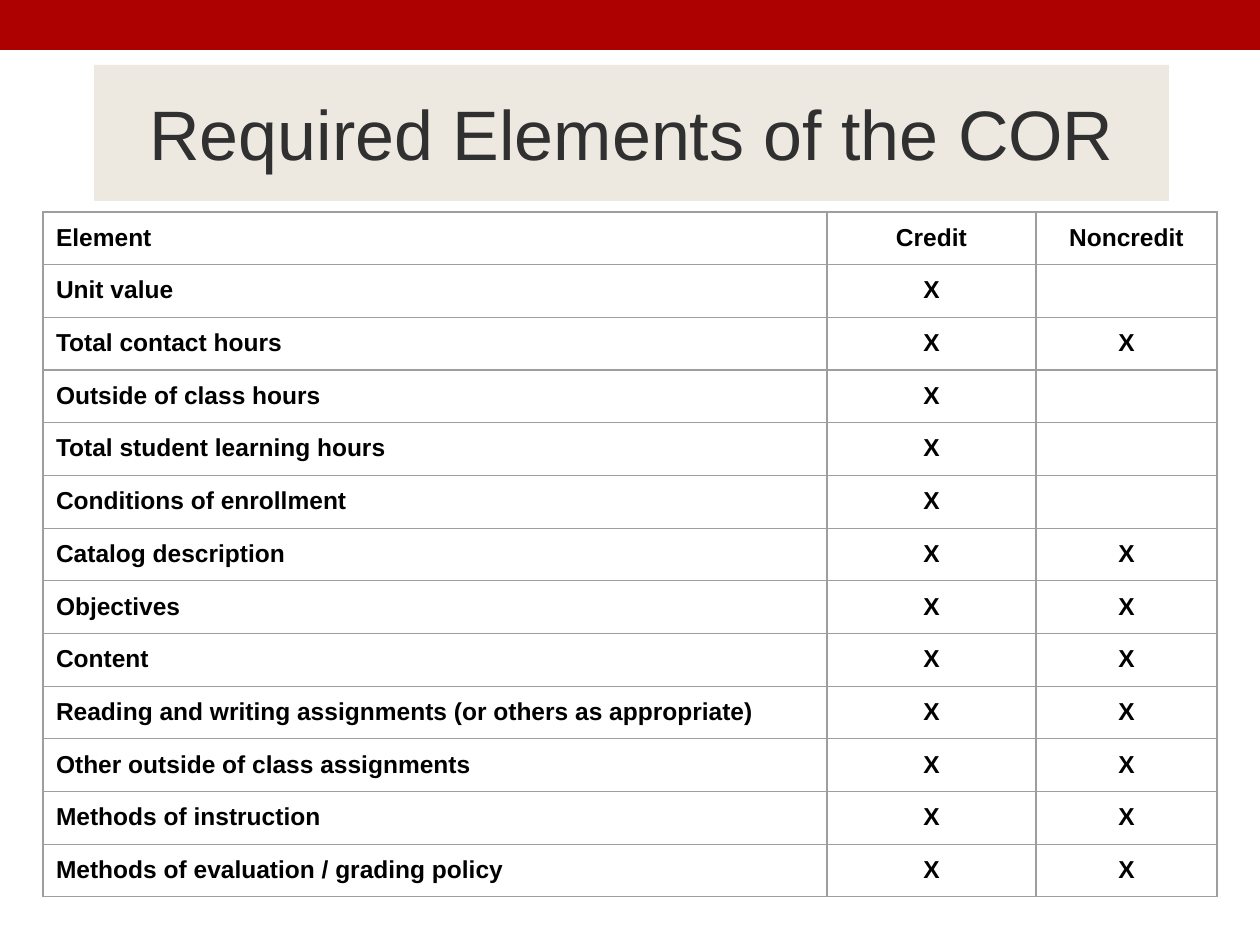
from lxml.etree import SubElement
from pptx import Presentation
from pptx.dml.color import RGBColor
from pptx.enum.shapes import MSO_SHAPE
from pptx.enum.text import MSO_ANCHOR, PP_ALIGN
from pptx.oxml.ns import qn
from pptx.util import Pt

TITLE = "Required Elements of the COR"
ROWS = [
    ("Element", "Credit", "Noncredit"),
    ("Unit value", "X", ""),
    ("Total contact hours", "X", "X"),
    ("Outside of class hours", "X", ""),
    ("Total student learning hours", "X", ""),
    ("Conditions of enrollment", "X", ""),
    ("Catalog description", "X", "X"),
    ("Objectives", "X", "X"),
    ("Content", "X", "X"),
    ("Reading and writing assignments (or others as appropriate)", "X", "X"),
    ("Other outside of class assignments", "X", "X"),
    ("Methods of instruction", "X", "X"),
    ("Methods of evaluation / grading policy", "X", "X"),
]
COLS = (784, 209, 181)
HIGH = 685
SIZE = 14
HUES = {"bar": "AD0101", "panel": "EDE9E1", "title": "303030",
        "text": "000000", "line": "9E9E9E"}


def px(n):
    return round(n * 914400 / 126)


def hue(name):
    return RGBColor.from_string(HUES[name])


def style(para, size, name, align, bold):
    para.alignment = align
    font = para.font
    font.name, font.size, font.bold = "Arial", Pt(size), bold
    font.color.rgb = hue(name)


def paint(shape, name):
    shape.fill.solid()
    shape.fill.fore_color.rgb = hue(name)


def edge(cell):
    props = cell._tc.get_or_add_tcPr()
    for tag in ("a:lnL", "a:lnR", "a:lnT", "a:lnB"):
        line = SubElement(props, qn(tag), w=str(Pt(0.75)))
        fill = SubElement(line, qn("a:solidFill"))
        SubElement(fill, qn("a:srgbClr"), val=HUES["line"])


def add_title(slide):
    title = slide.shapes.title
    title.left, title.top = px(94), px(65)
    title.width, title.height = px(1075), px(136)
    paint(title, "panel")
    frame = title.text_frame
    frame.text = TITLE
    frame.vertical_anchor = MSO_ANCHOR.MIDDLE
    style(frame.paragraphs[0], 40, "title", PP_ALIGN.CENTER, False)


def add_bar(slide):
    bar = slide.shapes.add_shape(MSO_SHAPE.RECTANGLE, 0, 0, px(1260), px(50))
    bar.shadow.inherit = False
    paint(bar, "bar")
    bar.line.fill.background()


def add_grid(slide):
    grid = slide.shapes.add_table(len(ROWS), len(COLS), px(43), px(212),
                                  px(sum(COLS)), px(HIGH)).table
    grid.first_row = grid.horz_banding = False
    for col, wide in zip(grid.columns, COLS):
        col.width = px(wide)
    for r, row in enumerate(ROWS):
        grid.rows[r].height = px(HIGH / len(ROWS))
        for c, text in enumerate(row):
            cell = grid.cell(r, c)
            cell.text = text
            cell.margin_left = cell.margin_right = px(13)
            cell.margin_top = cell.margin_bottom = px(12)
            edge(cell)
            cell.fill.background()
            para = cell.text_frame.paragraphs[0]
            align = PP_ALIGN.CENTER if c else PP_ALIGN.LEFT
            style(para, SIZE, "text", align, True)
            if not text:
                para._p.get_or_add_endParaRPr().set("sz", str(SIZE * 100))


def main():
    deck = Presentation()
    deck.slide_width, deck.slide_height = px(1260), px(945)
    slide = deck.slides.add_slide(deck.slide_layouts[5])
    add_bar(slide)
    add_title(slide)
    add_grid(slide)
    deck.save("out.pptx")


if __name__ == "__main__":
    main()
